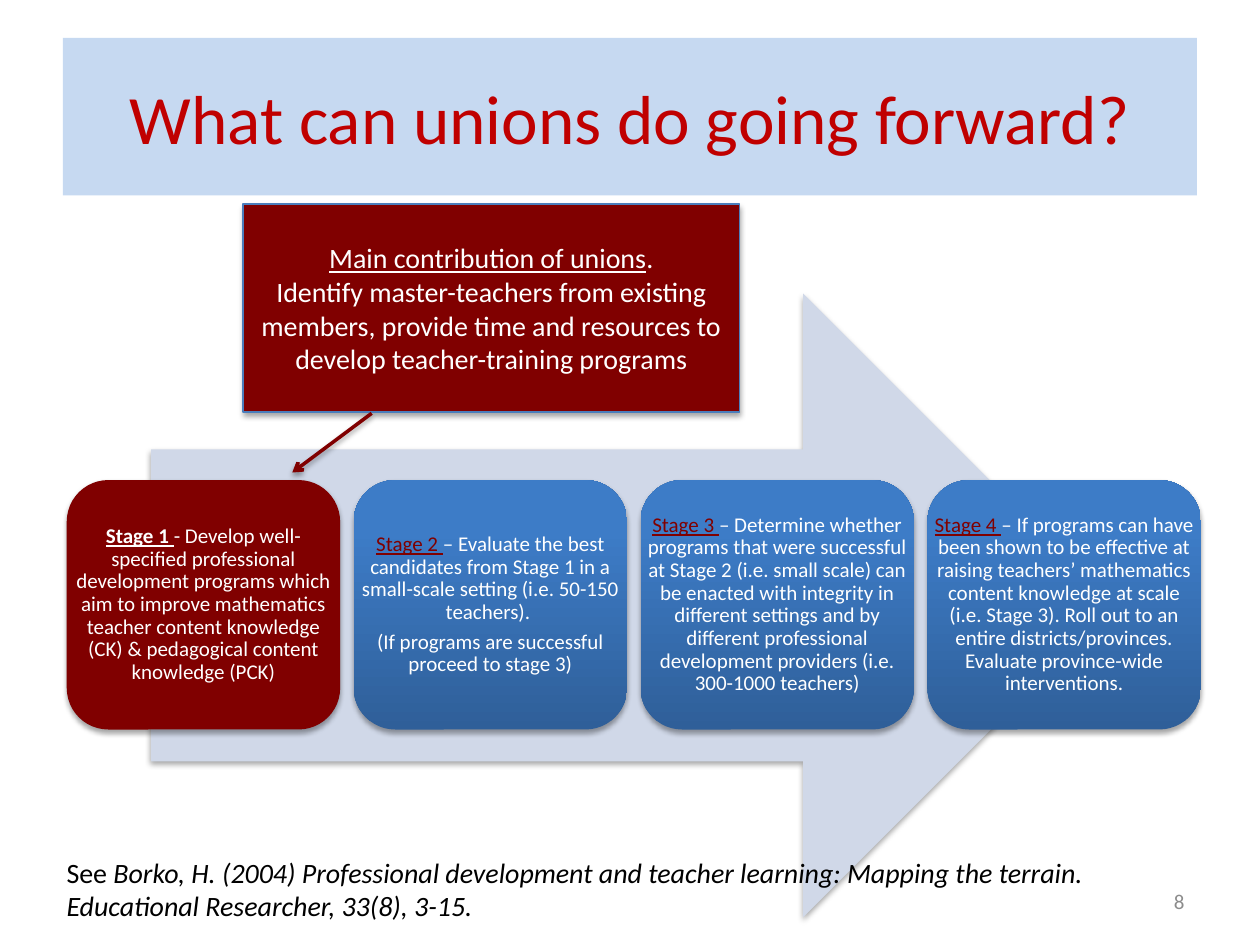
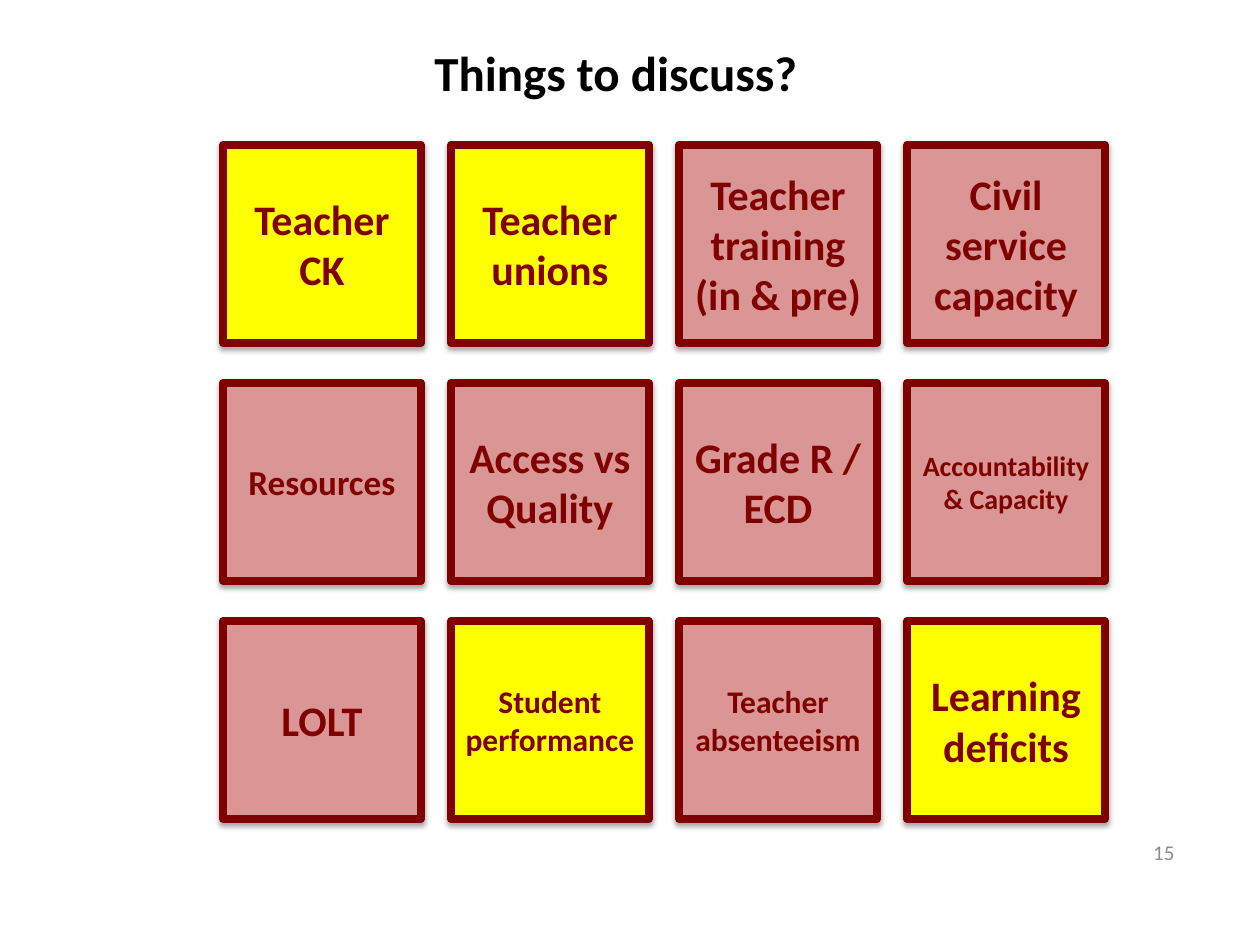
"""Build two slides on unions: the staged plan and the grid of topics."""
from dataclasses import dataclass, field
from typing import Any

from lxml import etree
from pptx import Presentation
from pptx.dml.color import RGBColor
from pptx.enum.shapes import MSO_CONNECTOR, MSO_SHAPE
from pptx.enum.text import MSO_ANCHOR, PP_ALIGN
from pptx.oxml import parse_xml
from pptx.oxml.ns import nsdecls, qn
from pptx.util import Inches, Pt

RECT, ROUND, ARROW = MSO_SHAPE.RECTANGLE, MSO_SHAPE.ROUNDED_RECTANGLE, MSO_SHAPE.RIGHT_ARROW
LINE = MSO_CONNECTOR.STRAIGHT
MID, TOP = MSO_ANCHOR.MIDDLE, MSO_ANCHOR.TOP
LEFT, MIDST, RIGHT = PP_ALIGN.LEFT, PP_ALIGN.CENTER, PP_ALIGN.RIGHT

FONT = "Calibri"
WHITE, BLACK, GREY = "FFFFFF", "000000", "8C8C8C"
DARK, RED, PINK, YELLOW = "800000", "C00000", "D99694", "FFFF00"
BAND, PALE, EDGE = "C6D9F1", "D0D8E8", "4B7EBC"
BLUES = ((0, "2F5F99"), (0.8, "3D7CC7"))

Box = tuple[float, float, float, float]


@dataclass
class Bit:
    """A run of text with its own format values."""
    text: str
    color: str = WHITE
    form: dict[str, Any] = field(default_factory=dict)


@dataclass
class Style:
    """How the text of a frame is set."""
    size: float
    align: Any = MIDST
    anchor: Any = MID
    inset: float | None = None
    para: dict[str, Any] = field(default_factory=dict)


@dataclass
class Stage:
    """A step of the plan."""
    paras: list[list[Bit]]
    fill: Any = BLUES


@dataclass
class Topic:
    """A square of the grid."""
    lines: list[str]
    size: float = 24
    fill: str = PINK


Paras = list[list[Bit]]
UNDER = {"underline": True}
STAGE = Style(12, inset=0.05, para={"line_spacing": 0.9, "space_after": Pt(4)})


def rgb(code: str) -> RGBColor:
    """Turn a hex string into a colour."""
    return RGBColor.from_string(code)


def put(obj: Any, vals: dict[str, Any]) -> None:
    """Set each named value on an object."""
    for name, val in vals.items():
        setattr(obj, name, val)


def shade(shape: Any) -> None:
    """Give a shape or line the soft drop shadow."""
    shape._element.spPr.append(parse_xml(
        f'<a:effectLst {nsdecls("a")}><a:outerShdw blurRad="{Pt(3.1)}" dist="{Pt(1.8)}" '
        f'dir="5400000" rotWithShape="0"><a:srgbClr val="{BLACK}"><a:alpha val="35000"/>'
        '</a:srgbClr></a:outerShdw></a:effectLst>'))


def write(shape: Any, paras: Paras, style: Style) -> None:
    """Fill the text frame of a shape."""
    frame = shape.text_frame
    put(frame, {"word_wrap": True, "vertical_anchor": style.anchor})
    if style.inset is not None:
        sides = ("left", "right", "top", "bottom")
        put(frame, {f"margin_{side}": Inches(style.inset) for side in sides})
    for num, bits in enumerate(paras):
        para = frame.add_paragraph() if num else frame.paragraphs[0]
        put(para, {"alignment": style.align, **style.para})
        for bit in bits:
            run = para.add_run()
            run.text = bit.text
            put(run.font, {"name": FONT, "size": Pt(style.size), **bit.form})
            run.font.color.rgb = rgb(bit.color)


def label(slide: Any, box: Box, paras: Paras, style: Style) -> None:
    """Add a plain text box."""
    write(slide.shapes.add_textbox(*map(Inches, box)), paras, style)


def block(slide: Any, kind: Any, box: Box, fill: Any,
          edge: tuple[str, float] | None = None, soft: bool = True) -> Any:
    """Add a filled shape, with edge and shadow if asked for."""
    shape = slide.shapes.add_shape(kind, *map(Inches, box))
    if isinstance(fill, str):
        shape.fill.solid()
        shape.fill.fore_color.rgb = rgb(fill)
    else:
        shape.fill.gradient()
        shape.fill.gradient_angle = 90
        for stop, (place, code) in zip(shape.fill.gradient_stops, fill):
            stop.position = place
            stop.color.rgb = rgb(code)
    if edge:
        shape.line.color.rgb = rgb(edge[0])
        shape.line.width = Pt(edge[1])
    else:
        shape.line.fill.background()
    if soft:
        shade(shape)
    else:
        shape.shadow.inherit = False
    return shape


def point(slide: Any, ends: Box, color: str, width: float) -> None:
    """Add a line with an arrowhead at its end."""
    line = slide.shapes.add_connector(LINE, *map(Inches, ends))
    line.line.color.rgb = rgb(color)
    line.line.width = Pt(width)
    etree.SubElement(line._element.spPr.find(qn("a:ln")), qn("a:tailEnd"), type="arrow")
    shade(line)


def number(slide: Any, left: float, top: float, num: int) -> None:
    """Add the slide number."""
    label(slide, (left, top, 2.33, 0.4), [[Bit(str(num), GREY)]], Style(12, RIGHT))


STAGES = [
    Stage([[Bit("Stage 1 ", form={"bold": True, **UNDER}),
            Bit("- Develop well-specified professional development programs which aim to "
                "improve mathematics teacher content knowledge (CK) & pedagogical content "
                "knowledge (PCK)")]], DARK),
    Stage([[Bit("Stage 2 ", DARK, UNDER),
            Bit("– Evaluate the best candidates from Stage 1 in a small-scale setting "
                "(i.e. 50-150 teachers). ")],
           [Bit("(If programs are successful proceed to stage 3)")]]),
    Stage([[Bit("Stage 3 ", DARK, UNDER),
            Bit("– Determine whether programs that were successful at Stage 2 (i.e. small "
                "scale) can be enacted with integrity in different settings and by different "
                "professional development providers (i.e. 300-1000 teachers)")]]),
    Stage([[Bit("Stage 4 ", DARK, UNDER),
            Bit("– If programs can have been shown to be effective at raising teachers’ "
                "mathematics content knowledge at scale (i.e. Stage 3). Roll out to an entire "
                "districts/provinces. Evaluate province-wide interventions.")]]),
]

TOPICS = [
    [Topic(["Teacher CK"], fill=YELLOW), Topic(["Teacher unions"], fill=YELLOW),
     Topic(["Teacher training", "(in & pre)"]), Topic(["Civil service capacity"])],
    [Topic(["Resources"], 20), Topic(["Access vs Quality"]),
     Topic(["Grade R / ECD"]), Topic(["Accountability & Capacity"], 16)],
    [Topic(["LOLT"]), Topic(["Student performance"], 18, YELLOW),
     Topic(["Teacher absenteeism"], 18), Topic(["Learning deficits"], fill=YELLOW)],
]


def plan(slide: Any) -> None:
    """Draw the four stages on their arrow."""
    band = block(slide, RECT, (0.5, 0.3, 9, 1.25), BAND, soft=False)
    write(band, [[Bit("What can unions do going forward?", RED)]], Style(39.6))
    block(slide, ARROW, (1.2, 2.33, 7.65, 4.95), PALE)
    for col, stage in enumerate(STAGES):
        box = (0.53 + col * 2.277, 3.81, 2.17, 1.98)
        block(slide, ROUND, box, stage.fill)
        label(slide, box, stage.paras, STAGE)
    number(slide, 7.17, 6.95, 8)
    slant = {"italic": True}
    label(slide, (0.43, 6.74, 8.45, 0.64), [
        [Bit("See ", BLACK),
         Bit("Borko, H. (2004) Professional development and teacher learning: "
             "Mapping the terrain.", BLACK, slant)],
        [Bit("Educational Researcher, 33(8), 3-15.", BLACK, slant)],
    ], Style(16, LEFT, TOP))
    main_box = block(slide, RECT, (1.93, 1.62, 3.94, 1.65), DARK, (EDGE, 0.75))
    write(main_box, [
        [Bit("Main contribution of unions", form=UNDER), Bit(".")],
        [Bit("Identify master-teachers from existing members, provide time and resources "
             "to develop teacher-training programs")],
    ], Style(16))
    point(slide, (2.95, 3.28, 2.32, 3.75), DARK, 2)


def grid(slide: Any) -> None:
    """Draw the squares of topics."""
    bold = {"bold": True}
    label(slide, (3.35, 0.29, 3.7, 0.57), [[Bit("Things to discuss?", BLACK, bold)]],
          Style(28, LEFT, TOP))
    for row, topics in enumerate(TOPICS):
        for col, topic in enumerate(topics):
            box = (1.77 + col * 1.81, 1.15 + row * 1.89, 1.57, 1.57)
            cell = block(slide, RECT, box, topic.fill, (DARK, 4.5))
            write(cell, [[Bit(text, DARK, bold)] for text in topic.lines], Style(topic.size))
    number(slide, 7.09, 6.56, 15)


def main() -> None:
    """Build and save the deck."""
    deck = Presentation()
    put(deck, {"slide_width": Inches(10), "slide_height": Inches(7.5)})
    for draw in (plan, grid):
        draw(deck.slides.add_slide(deck.slide_layouts[6]))
    deck.save("out.pptx")


if __name__ == "__main__":
    main()
